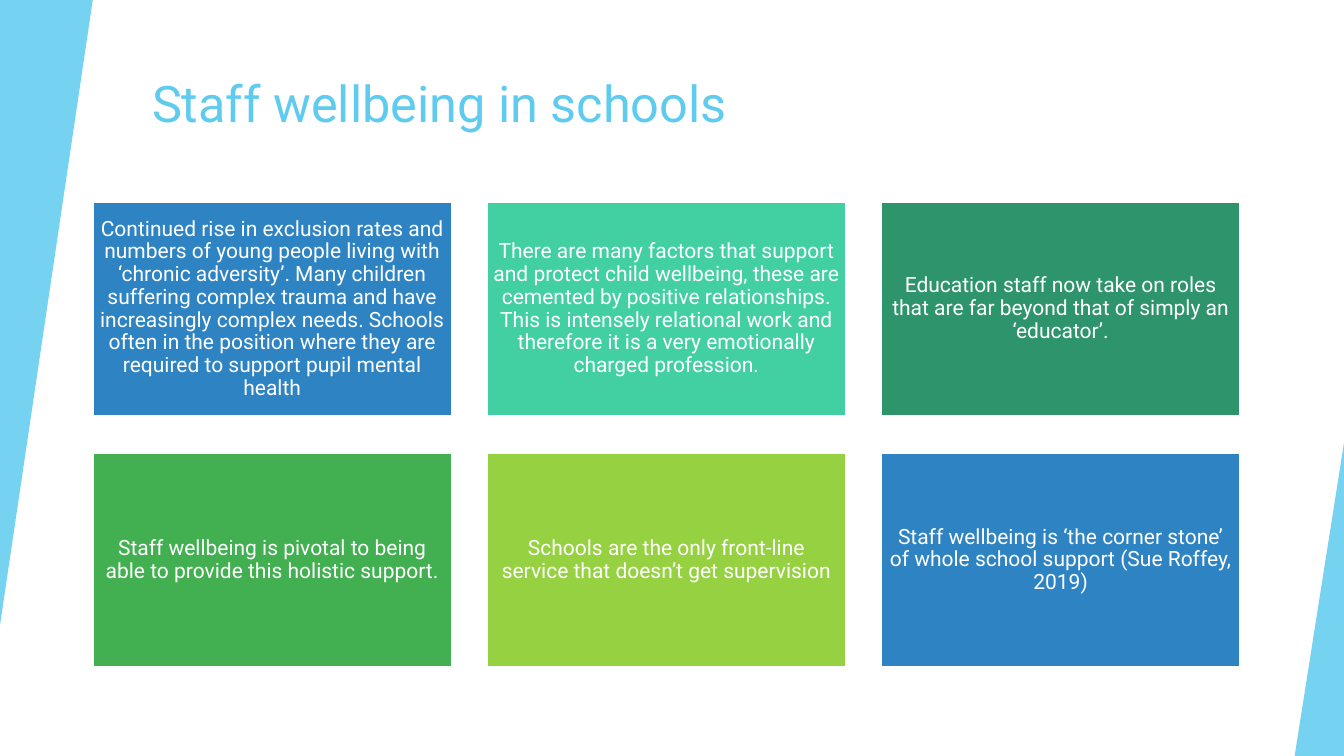
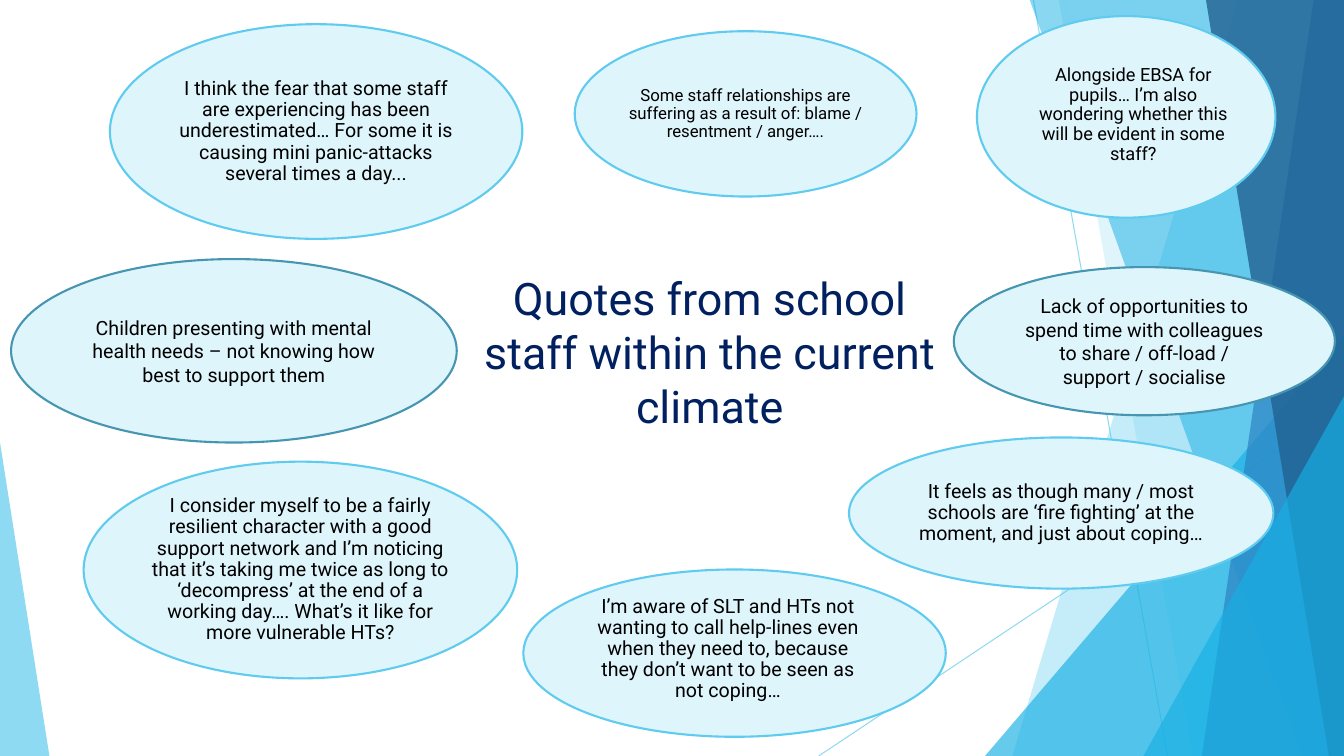
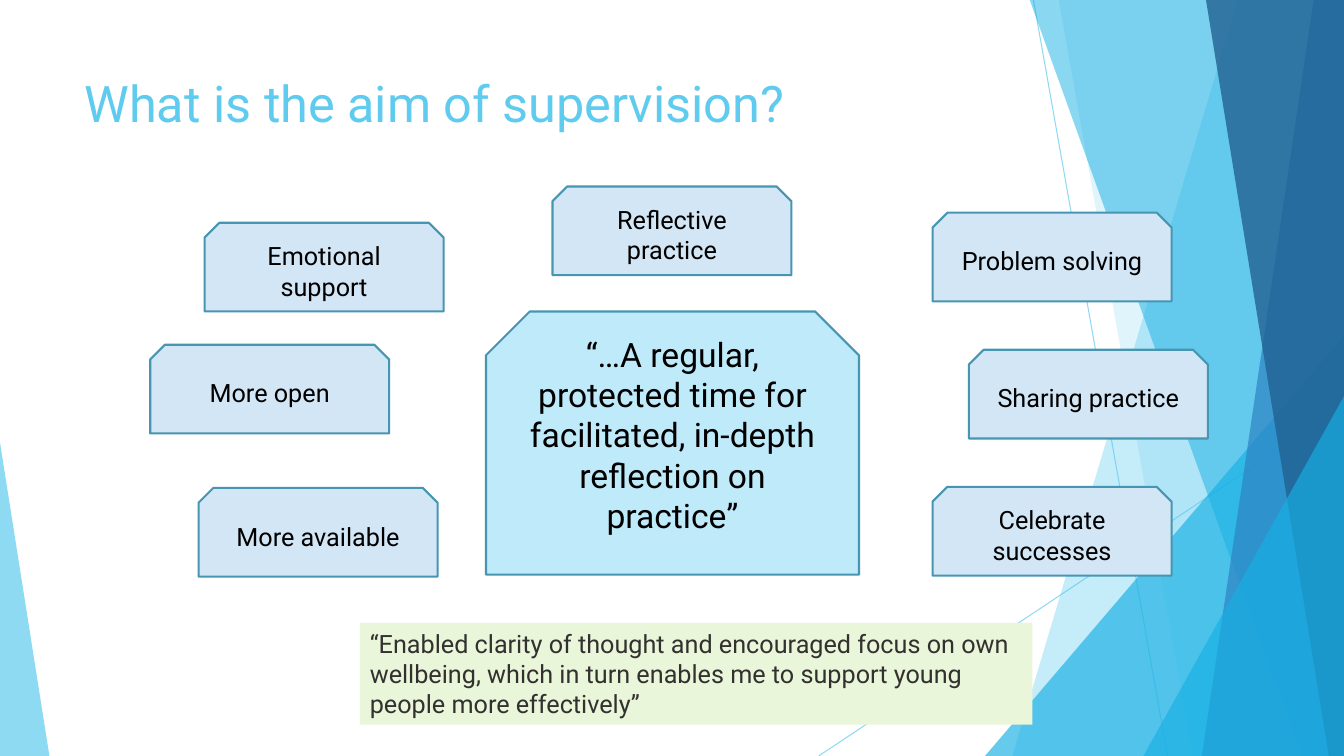
from lxml.etree import SubElement
from pptx import Presentation
from pptx.dml.color import RGBColor
from pptx.enum.shapes import MSO_CONNECTOR as LINK, MSO_SHAPE as KIND
from pptx.enum.text import MSO_ANCHOR as ANCHOR, PP_ALIGN as ALIGN
from pptx.oxml.ns import qn
from pptx.util import Inches, Pt

WIDE, HIGH = 13.33, 7.5
FONT = "Roboto"
SKY, CYAN, BLUE, NAVY = "5FCBEF", "17B0E4", "2E83C3", "226292"
TEAL, WHITE, BLACK = "4696B1", "FFFFFF", "000000"
PAD = (0.1, 0.05, 0.1, 0.05)
THIN = (0.01,) * 4

# Text, fill
CARDS = [
    ("Continued rise in exclusion rates and numbers of young people living with ‘chronic adversity’. "
     "Many children suffering complex trauma and have increasingly complex needs. Schools often in "
     "the position where they are required to support pupil mental health", BLUE),
    ("There are many factors that support and protect child wellbeing, these are cemented by positive "
     "relationships. This is intensely relational work and therefore it is a very emotionally charged "
     "profession.", "42D0A2"),
    ("Education staff now take on roles that are far beyond that of simply an ‘educator’.", "2E946B"),
    ("Staff wellbeing is pivotal to being able to provide this holistic support.", "42B051"),
    ("Schools are the only front-line service that doesn’t get supervision", "96D141"),
    ("Staff wellbeing is ‘the corner stone’ of whole school support (Sue Roffey, 2019)", BLUE),
]

# Text, place, size, line colour, line spacing, insets
QUOTES = [
    ("Children presenting with mental health needs – not knowing how best to support them",
     (0.11, 2.57, 4.42, 1.82), 14, TEAL, 1, PAD),
    ("I consider myself to be a fairly resilient character with a good support network and I’m "
     "noticing that it’s taking me twice as long to ‘decompress’ at the end of a working day…. "
     "What’s it like for more vulnerable HTs?",
     (0.83, 4.58, 4.3, 2.15), 14, SKY, 0.9, THIN),
    ("It feels as though many / most schools are ‘fire fighting’ at the moment, and just about coping…",
     (8.42, 4.34, 4.21, 1.5), 14, SKY, 0.9, THIN),
    ("I’m aware of SLT and HTs not wanting to call help-lines even when they need to, because they "
     "don’t want to be seen as not coping…",
     (5.19, 5.65, 4.19, 1.66), 14, SKY, 0.9, (0.02, 0.01, 0.15, 0.09)),
    ("Lack of opportunities to spend time with colleagues to share / off-load / support / socialise",
     (9.46, 2.65, 3.78, 1.47), 14, TEAL, 1, PAD),
    ("Alongside EBSA for pupils… I’m also wondering whether this will be evident in some staff?",
     (9.69, 0.16, 2.96, 2), 13, SKY, 0.9, (0.15, 0.01, 0.01, 0.05)),
    ("Some staff relationships are suffering as a result of: blame / resentment / anger….",
     (5.7, 0.31, 3.39, 1.64), 12, SKY, 0.9, THIN),
    ("I think the fear that some staff are experiencing has been underestimated… For some it is "
     "causing mini panic-attacks several times a day...",
     (1.09, 0.24, 4.09, 2.13), 14, SKY, 0.9, THIN),
]

# Text, left, top
AIMS = [
    ("Emotional support", 2.03, 2.21),
    ("More open", 1.49, 3.42),
    ("More available", 1.97, 4.84),
    ("Reflective practice", 5.48, 1.85),
    ("Problem solving", 9.25, 2.11),
    ("Sharing practice", 9.61, 3.47),
    ("Celebrate successes", 9.25, 4.83),
]


def tint(code):
    return RGBColor.from_string(code)


def fade(shape, pct):
    """Make the shape's one colour pct percent opaque."""
    color = next(shape._element.iter(qn("a:srgbClr")))
    SubElement(color, qn("a:alpha"), val=str(pct * 1000))


def paint(shape, fill, line=None):
    shape.shadow.inherit = False
    shape.fill.solid()
    shape.fill.fore_color.rgb = tint(fill)
    if line:
        shape.line.color.rgb = tint(line)
        shape.line.width = Pt(1.5)
    else:
        shape.line.fill.background()


def write(shape, text, size, color=BLACK, align=ALIGN.CENTER, anchor=ANCHOR.MIDDLE,
          space=1, pad=PAD):
    frame = shape.text_frame
    left, top, right, bottom = map(Inches, pad)
    look = {"word_wrap": True, "vertical_anchor": anchor, "margin_left": left,
            "margin_top": top, "margin_right": right, "margin_bottom": bottom}
    for name, value in look.items():
        setattr(frame, name, value)
    para = frame.paragraphs[0]
    para.alignment = align
    para.line_spacing = space
    run = para.add_run()
    run.text = text
    for name, value in {"name": FONT, "size": Pt(size)}.items():
        setattr(run.font, name, value)
    run.font.color.rgb = tint(color)


def box(slide, kind, place, fill, line=None):
    shape = slide.shapes.add_shape(kind, *map(Inches, place))
    paint(shape, fill, line)
    return shape


def title(slide, text, place, size=36, color=SKY, align=ALIGN.LEFT):
    shape = slide.shapes.add_textbox(*map(Inches, place))
    write(shape, text, size, color, align, ANCHOR.TOP)


def wedge(slide, place, tip, color, pct, turn=0):
    """Right-angled triangle with its tip at the left (0) or right (1)."""
    shape = box(slide, KIND.ISOSCELES_TRIANGLE, place, color)
    shape.adjustments[0] = tip
    shape.rotation = turn
    fade(shape, pct)


def strip(slide, top, foot, color, pct):
    """Band from a slanted left edge to the right edge of the slide."""
    edge = [(top, -0.01), (WIDE, -0.01), (WIDE, HIGH), (foot, HIGH)]
    dots = [(Inches(x), Inches(y)) for x, y in edge]
    path = slide.shapes.build_freeform(*dots[0])
    path.add_line_segments(dots[1:], close=True)
    shape = path.convert_to_shape()
    paint(shape, color)
    fade(shape, pct)


def ray(slide, *ends):
    line = slide.shapes.add_connector(LINK.STRAIGHT, *map(Inches, ends))
    line.line.color.rgb = tint(SKY)
    line.line.width = Pt(0.75)
    fade(line, 70)
    SubElement(line._element.spPr, qn("a:effectLst"))


def facets(slide):
    """Overlapping bands shared by the decorated slides."""
    ray(slide, 10.25, 0, 11.58, HIGH)
    ray(slide, WIDE, 4.03, 8.12, HIGH)
    strip(slide, 12.28, 10.04, SKY, 36)
    strip(slide, 10.5, 11.83, SKY, 20)
    wedge(slide, (9.77, 3.33, 3.56, 4.17), 1, CYAN, 66)
    strip(slide, 10.21, 12.91, CYAN, 50)
    strip(slide, 13.03, 11.92, BLUE, 70)
    strip(slide, 11.96, 13.18, NAVY, 80)
    wedge(slide, (11.34, 3.93, 1.99, 3.57), 1, CYAN, 66)
    wedge(slide, (0, 4.39, 0.49, 3.11), 0, SKY, 70)


def staff(slide):
    title(slide, "Staff wellbeing in schools", (1.41, 0.67, 11.15, 1.2))
    wedge(slide, (0, 0, 0.92, 6.2), 1, SKY, 85, turn=180)
    wedge(slide, (12.84, 4.39, 0.49, 3.11), 1, SKY, 85)
    for i, (text, fill) in enumerate(CARDS):
        row, col = divmod(i, 3)
        place = (0.92 + 3.91 * col, 2 + 2.49 * row, 3.56, 2.13)
        card = box(slide, KIND.RECTANGLE, place, fill, WHITE)
        write(card, text, 15, WHITE, space=0.9, pad=(0.06,) * 4)


def quotes(slide):
    facets(slide)
    for text, place, size, line, space, pad in QUOTES:
        bubble = box(slide, KIND.OVAL, place, "DFF5FC", line)
        write(bubble, text, size, space=space, pad=pad)
    title(slide, "Quotes from school staff within the current climate",
          (4.63, 2.64, 4.82, 1.79), 32, "002060", ALIGN.CENTER)


def aims(slide):
    facets(slide)
    title(slide, "What is the aim of supervision?", (0.74, 0.67, 9.4, 1.44))
    snip = KIND.SNIP_2_SAME_RECTANGLE
    core = box(slide, snip, (4.82, 3.09, 3.7, 2.61), "BFEAF9", TEAL)
    write(core, "“…A regular, protected time for facilitated, in-depth reflection on practice”",
          24, pad=(0.1, 0.05, 0.1, 0.44))
    for text, left, top in AIMS:
        aim = box(slide, snip, (left, top, 2.37, 0.88), "D3E6F5", TEAL)
        write(aim, text, 18)
    note = box(slide, KIND.RECTANGLE, (3.57, 6.18, 6.67, 1.01), "EAF6D9")
    write(note, "“Enabled clarity of thought and encouraged focus on own wellbeing, which in turn "
          "enables me to support young people more effectively”",
          18, "323130", ALIGN.LEFT, ANCHOR.TOP)


def main():
    deck = Presentation()
    deck.slide_width, deck.slide_height = Inches(WIDE), Inches(HIGH)
    for build in (staff, quotes, aims):
        build(deck.slides.add_slide(deck.slide_layouts[6]))
    deck.save("out.pptx")


if __name__ == "__main__":
    main()
